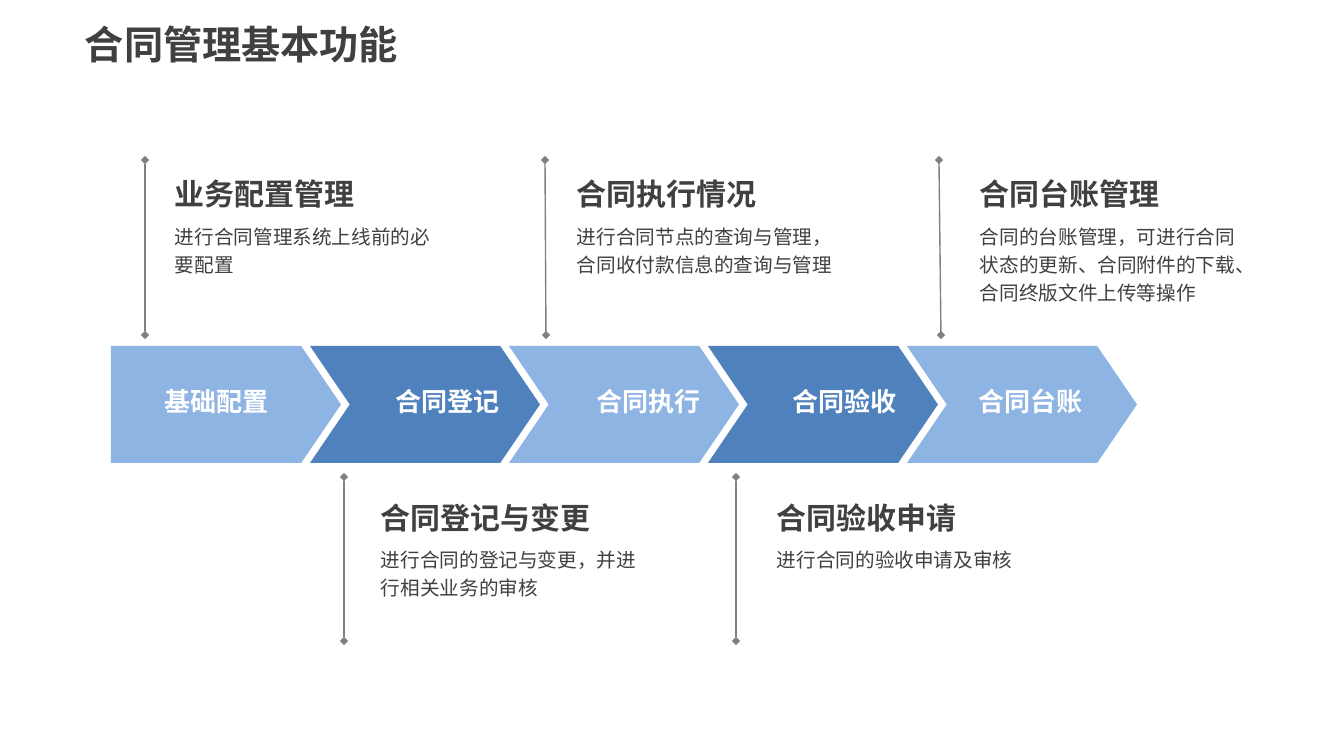
from lxml import etree
from pptx import Presentation
from pptx.dml.color import RGBColor
from pptx.enum.shapes import MSO_CONNECTOR, MSO_SHAPE
from pptx.enum.text import MSO_ANCHOR, MSO_AUTO_SIZE, PP_ALIGN
from pptx.oxml.ns import qn
from pptx.util import Emu, Pt

STRAIGHT = MSO_CONNECTOR.STRAIGHT
PENTAGON, CHEVRON = MSO_SHAPE.PENTAGON, MSO_SHAPE.CHEVRON
TOP, MIDDLE = MSO_ANCHOR.TOP, MSO_ANCHOR.MIDDLE
GROW, FIXED = MSO_AUTO_SIZE.SHAPE_TO_FIT_TEXT, MSO_AUTO_SIZE.NONE
LEFT, CENTER = PP_ALIGN.LEFT, PP_ALIGN.CENTER

LIGHT_BLUE = RGBColor(0x8E, 0xB4, 0xE3)
BLUE = RGBColor(0x4F, 0x81, 0xBD)
GRAY = RGBColor(0x80, 0x80, 0x80)
DARK = RGBColor(0x40, 0x40, 0x40)
WHITE = RGBColor(0xFF, 0xFF, 0xFF)

SLIDE_W, SLIDE_H = 1344, 756
SCALE = 12192000 / SLIDE_W
BODY_FONT = "Calibri"
CJK_FONT = "Noto Sans CJK SC"

ARROW_LEFT, ARROW_STEP = 111, 199
ABOVE = {"line": (335, 160), "heading": 171, "body": 215}
BELOW = {"line": (641, 477), "heading": 495, "body": 538}

STEPS = [
    ("基础配置", 153, (145, 145), 165, "业务配置管理",
     "进行合同管理系统上线前的必要配置", 66),
    ("合同登记", 384, (344, 344), 371, "合同登记与变更",
     "进行合同的登记与变更，并进行相关业务的审核", 66),
    ("合同执行", 585, (546, 545), 567, "合同执行情况",
     "进行合同节点的查询与管理，合同收付款信息的查询与管理", 66),
    ("合同验收", 781, (736, 736), 767, "合同验收申请",
     "进行合同的验收申请及审核", 38),
    ("合同台账", 967, (941, 939), 970, "合同台账管理",
     "合同的台账管理，可进行合同状态的更新、合同附件的下载、合同终版文件上传等操作", 95),
]


def px(*values):
    return [Emu(round(v * SCALE)) for v in values]


class Deck:
    def __init__(self):
        self.prs = Presentation()
        self.prs.slide_width, self.prs.slide_height = px(SLIDE_W, SLIDE_H)
        self.slide = self.prs.slides.add_slide(self.prs.slide_layouts[6])

    def arrow(self, kind, box, color):
        sp = self.slide.shapes.add_shape(kind, *px(*box))
        sp.adjustments[0] = 0.34
        sp.shadow.inherit = False
        sp.fill.solid()
        sp.fill.fore_color.rgb = color
        sp.line.fill.background()

    def text(self, text, box, size, color=DARK, bold=True, font=BODY_FONT,
             align=LEFT, wrap=True, anchor=TOP, fit=GROW, spacing=None):
        tf = self.slide.shapes.add_textbox(*px(*box)).text_frame
        tf.text = text
        tf.word_wrap = wrap
        tf.auto_size = fit
        tf.vertical_anchor = anchor
        p = tf.paragraphs[0]
        p.alignment = align
        p.line_spacing = spacing
        r = p.runs[0]
        r.font.size = Pt(size)
        r.font.bold = bold
        r.font.color.rgb = color
        r.font.name = font
        etree.SubElement(r.font._element, qn("a:ea"), typeface=CJK_FONT)

    def line(self, x1, y1, x2, y2):
        cxn = self.slide.shapes.add_connector(STRAIGHT, *px(x1, y1, x2, y2))
        cxn.line.color.rgb = GRAY
        cxn.line.width = Pt(1)
        ln = cxn.line._get_or_add_ln()
        for end in ("a:headEnd", "a:tailEnd"):
            etree.SubElement(ln, qn(end), type="diamond")
        etree.SubElement(cxn._element.spPr, qn("a:effectLst"))


def main():
    deck = Deck()
    deck.text("合同管理基本功能", (75, 10, 1195, 68), 28, font=CJK_FONT,
              anchor=MIDDLE, fit=FIXED)
    for i, (label, label_x, line_x, text_x, heading, body, body_h) in enumerate(STEPS):
        side = BELOW if i % 2 else ABOVE
        deck.arrow(CHEVRON if i else PENTAGON,
                   (ARROW_LEFT + i * ARROW_STEP, 346, 230, 117),
                   BLUE if i % 2 else LIGHT_BLUE)
        deck.text(label, (label_x, 381, 127, 47), 18.6, WHITE,
                  align=CENTER, wrap=False, fit=FIXED)
        deck.line(line_x[0], side["line"][0], line_x[1], side["line"][1])
        deck.text(body, (text_x, side["body"], 285, body_h), 14,
                  bold=False, spacing=1.2)
        deck.text(heading, (text_x, side["heading"], 240, 46), 21.4)
    deck.prs.save("out.pptx")


if __name__ == "__main__":
    main()
